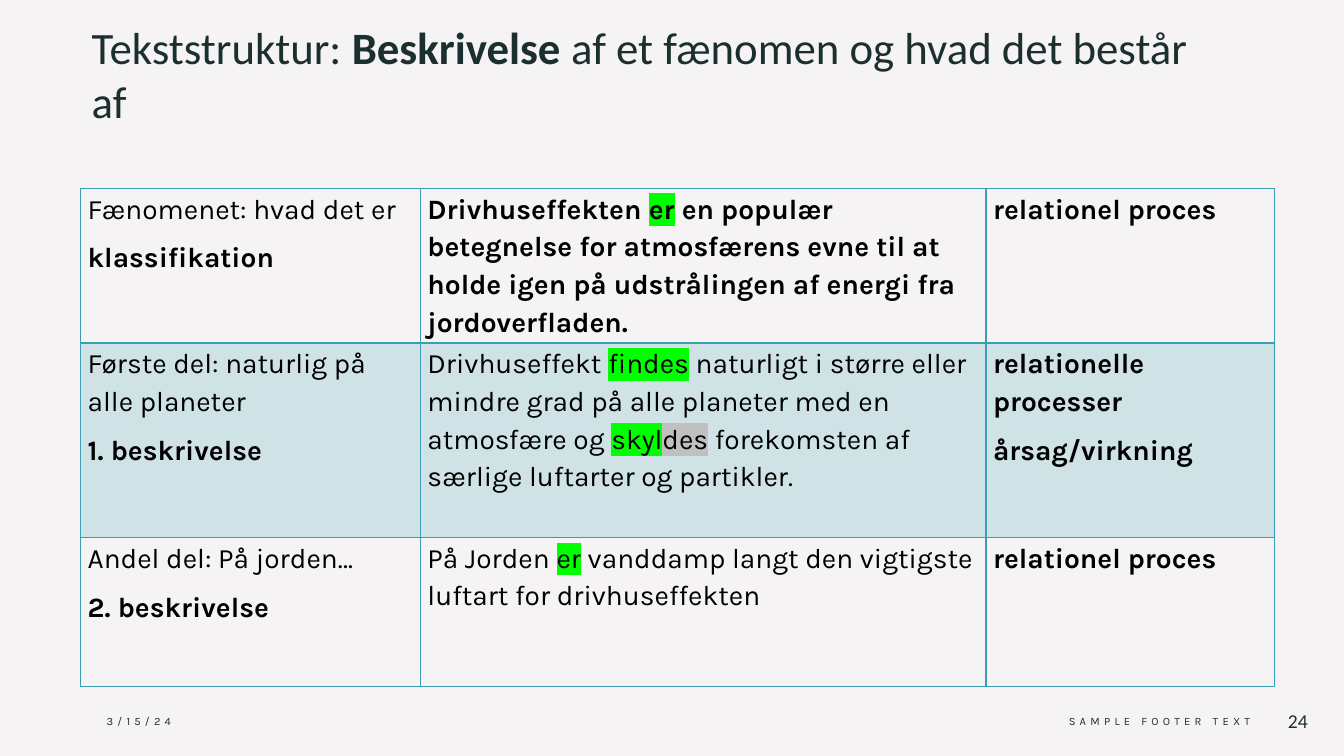
from lxml.etree import SubElement
from pptx import Presentation
from pptx.dml.color import RGBColor
from pptx.enum.text import MSO_ANCHOR as Anchor, PP_ALIGN as Align
from pptx.oxml import parse_xml
from pptx.oxml.ns import nsdecls, qn
from pptx.util import Inches, Pt

# Content: a cell is a list of (bold, runs), a run is (text, mark)
HEX = {"dark": "1B2F2F", "text": "000000", "teal": "3B9EB1",
       "back": "F5F3F3", "green": "00FF00", "grey": "C0C0C0"}
TITLE = [("Tekststruktur: ", False), ("Beskrivelse", True),
         (" af et fænomen og hvad det består af", False)]
ROWS = [
    [
        [(False, [("Fænomenet: hvad det er", None)]),
         (True, [("klassifikation", None)])],
        [(True, [("Drivhuseffekten ", None), ("er", "green"),
                 (" en populær betegnelse for atmosfærens evne til at holde "
                  "igen på udstrålingen af energi fra jordoverfladen.", None)])],
        [(True, [("relationel proces", None)])],
    ],
    [
        [(False, [("Første del: naturlig på alle planeter", None)]),
         (True, [("1. beskrivelse", None)])],
        [(False, [("Drivhuseffekt ", None), ("findes", "green"),
                  (" naturligt i større eller mindre grad på alle planeter "
                   "med en atmosfære og ", None),
                  ("skyl", "green"), ("des", "grey"),
                  (" forekomsten af særlige luftarter og partikler.", None)])],
        [(True, [("relationelle processer", None)]),
         (True, [("årsag/virkning", None)])],
    ],
    [
        [(False, [("Andel del: På jorden…", None)]),
         (True, [("2. beskrivelse", None)])],
        [(False, [("På Jorden ", None), ("er", "green"),
                  (" vanddamp langt den vigtigste luftart for "
                   "drivhuseffekten", None)])],
        [(True, [("relationel proces", None)])],
    ],
]
# Footer: text, left, width, align, font, size, letter spacing
FOOT = [("3/15/24", 0.96, 3, Align.LEFT, "Karla", 8, 3),
        ("SAMPLE FOOTER TEXT", 7.8, 4.7, Align.RIGHT, "Karla", 8, 3),
        ("24", 12.5, 0.57, Align.RIGHT, "Calibri", 14, 0)]

# Grid in inches
WIDE, HIGH = 13.33, 7.5
COLS, DEPTHS = [3.37, 5.61, 2.86], [1.33, 1.93, 1.48]
LEFT, TOP = 0.8, 1.87
FOOT_TOP, FOOT_HIGH = 6.95, 0.4
PLAIN = "{2D5ABB26-0587-4C30-8999-92F81FD0307C}"


def style(run, face, size, color, bold=False):
    font = run.font
    font.name, font.size, font.bold = face, Pt(size), bold
    font.color.rgb = RGBColor.from_string(HEX[color])


def mark_run(run, color):
    fill = run.font._element.find(qn("a:solidFill"))
    fill.addnext(parse_xml(f'<a:highlight {nsdecls("a")}>'
                           f'<a:srgbClr val="{HEX[color]}"/></a:highlight>'))


def fill_cell(cell, paras):
    cell.margin_left = cell.margin_right = Inches(0.07)
    cell.margin_top = cell.margin_bottom = 0
    frame = cell.text_frame
    for i, (bold, runs) in enumerate(paras):
        para = frame.add_paragraph() if i else frame.paragraphs[0]
        para.line_spacing, para.space_after = 1.15, Pt(8)
        for text, mark in runs:
            run = para.add_run()
            run.text = text
            style(run, "Karla", 20, "text", bold)
            if mark:
                mark_run(run, mark)


def paint_cell(cell, row):
    if row == 1:
        cell.fill.solid()
        cell.fill.fore_color.rgb = RGBColor.from_string(HEX["teal"])
    else:
        cell.fill.background()
    props = cell._tc.get_or_add_tcPr()
    for tint in props.iter(qn("a:srgbClr")):
        SubElement(tint, qn("a:alpha")).set("val", "20000")
    # The rule between the first two rows is thicker
    thick = {"L": 1, "R": 1, "T": 2 if row == 1 else 1, "B": 2 if row == 0 else 1}
    for i, (side, width) in enumerate(thick.items()):
        props.insert(i, parse_xml(
            f'<a:ln{side} {nsdecls("a")} w="{Pt(width)}"><a:solidFill>'
            f'<a:srgbClr val="{HEX["teal"]}"/></a:solidFill></a:ln{side}>'))


def add_title(slide):
    title = slide.shapes.title
    title.left, title.top = Inches(0.81), Inches(0.15)
    title.width, title.height = Inches(11.43), Inches(1.38)
    frame = title.text_frame
    frame.word_wrap, frame.vertical_anchor = True, Anchor.TOP
    para = frame.paragraphs[0]
    para.alignment = Align.LEFT
    for text, bold in TITLE:
        run = para.add_run()
        run.text = text
        style(run, "Calibri", 32, "dark", bold)


def add_grid(slide):
    shape = slide.shapes.add_table(
        len(DEPTHS), len(COLS), Inches(LEFT), Inches(TOP),
        Inches(sum(COLS)), Inches(sum(DEPTHS)))
    table = shape.table
    table.first_row = table.horz_banding = False
    table._tbl.tblPr.find(qn("a:tableStyleId")).text = PLAIN
    for col, width in zip(table.columns, COLS):
        col.width = Inches(width)
    for r, (row, depth) in enumerate(zip(table.rows, DEPTHS)):
        row.height = Inches(depth)
        for cell, paras in zip(row.cells, ROWS[r]):
            fill_cell(cell, paras)
            paint_cell(cell, r)


def add_foot(slide):
    for text, left, width, align, face, size, gap in FOOT:
        box = slide.shapes.add_textbox(Inches(left), Inches(FOOT_TOP),
                                       Inches(width), Inches(FOOT_HIGH))
        frame = box.text_frame
        frame.word_wrap, frame.vertical_anchor = True, Anchor.MIDDLE
        para = frame.paragraphs[0]
        para.text = text
        para.alignment, para.space_after = align, Pt(6)
        run = para.runs[0]
        style(run, face, size, "dark")
        if gap:
            run.font._element.set("spc", str(gap * 100))


def main():
    deck = Presentation()
    deck.slide_width, deck.slide_height = Inches(WIDE), Inches(HIGH)
    slide = deck.slides.add_slide(deck.slide_layouts[5])
    back = slide.background.fill
    back.solid()
    back.fore_color.rgb = RGBColor.from_string(HEX["back"])
    add_title(slide)
    add_foot(slide)
    add_grid(slide)
    deck.save("out.pptx")


if __name__ == "__main__":
    main()
